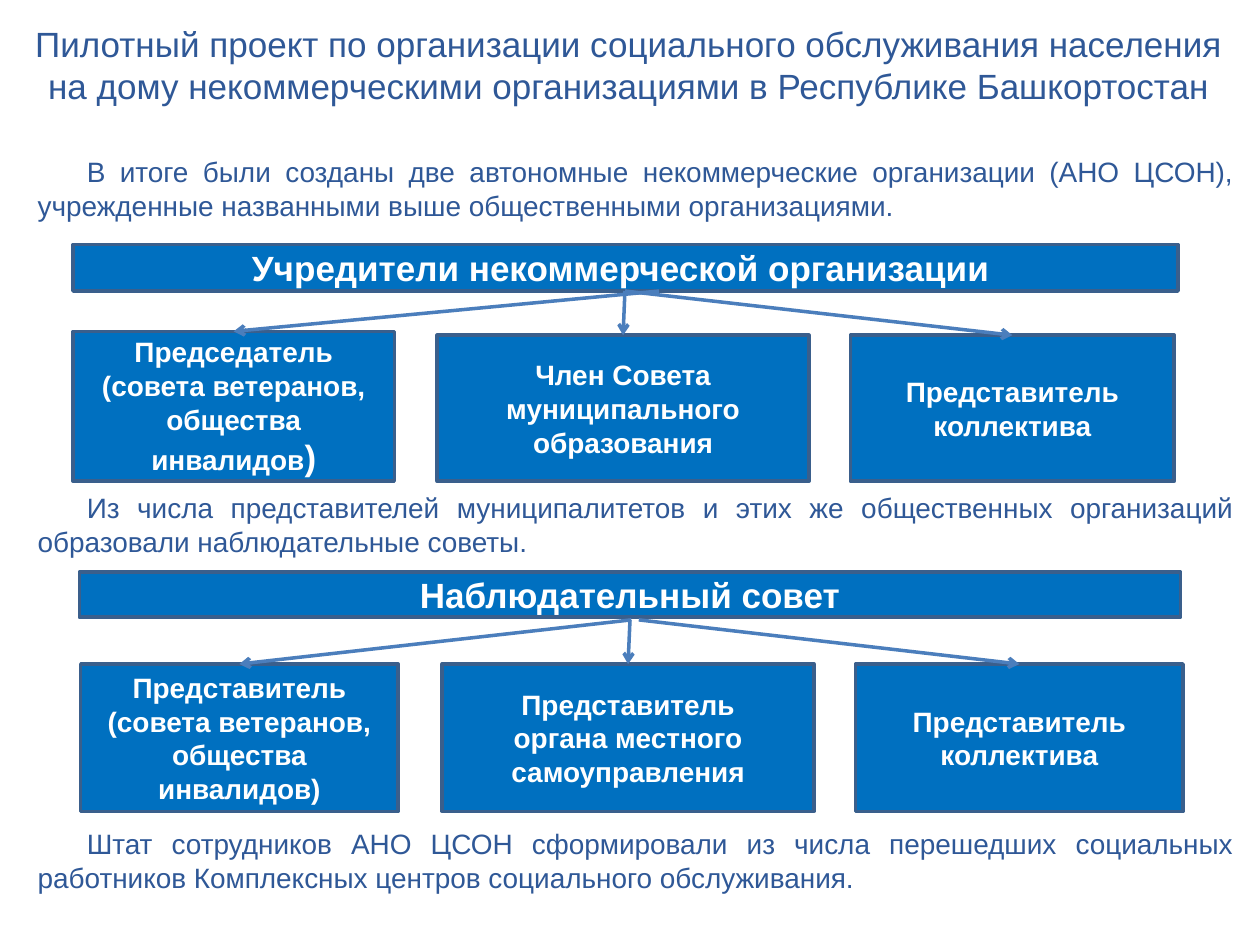
import pptx
import pptx.util
import pptx.dml.color
import pptx.enum.shapes
import pptx.enum.text
import pptx.oxml.ns
import lxml.etree

TEXT_BLUE = pptx.dml.color.RGBColor(0x2F, 0x58, 0x97)
FILL_BLUE = pptx.dml.color.RGBColor(0x00, 0x70, 0xC0)
EDGE_BLUE = pptx.dml.color.RGBColor(0x3A, 0x5F, 0x8C)
ARROW_BLUE = pptx.dml.color.RGBColor(0x4B, 0x7E, 0xBC)
WHITE = pptx.dml.color.RGBColor(0xFF, 0xFF, 0xFF)
ALIGN = pptx.enum.text.PP_ALIGN
FONT = "Arial"
LARGE, NORMAL = 20, 16

# Content; all places are percentages of the slide's width and height
TITLE = (
    "Пилотный проект по организации социального обслуживания населения \n"
    "на дому некоммерческими организациями в Республике Башкортостан "
)
STATEMENTS = [
    "В итоге были созданы две автономные некоммерческие организации (АНО ЦСОН), "
    "учрежденные названными выше общественными организациями. ",
    "Из числа представителей муниципалитетов и этих же общественных организаций "
    "образовали наблюдательные советы. ",
    "Штат сотрудников АНО ЦСОН сформировали из числа перешедших социальных "
    "работников Комплексных центров социального обслуживания. ",
]
STATEMENT_TOP, STATEMENT_STEP, STATEMENT_HEIGHT = 15.73, 35.56, 8.5

CHARTS = [
    {
        "header": ("Учредители некоммерческой организации ", 5.8, 25.87, 87.7, 4.93),
        "bottom": 50.93,
        "arrow_top": 30.8,
        # text, left, top, width, start of the arrow
        "members": [
            ("Председатель (совета ветеранов, общества инвалидов)", 5.8, 35.07, 25.5, 52.3),
            ("Член Совета муниципального образования", 34.7, 35.47, 29.5, 49.6),
            ("Представитель коллектива", 67.5, 35.47, 25.7, 49.6),
        ],
    },
    {
        "header": ("Наблюдательный совет", 6.3, 60.53, 87.4, 4.8),
        "bottom": 85.87,
        "arrow_top": 65.6,
        "members": [
            ("Предcтавитель (совета ветеранов, общества инвалидов)", 6.4, 70.27, 25.2, 50.1),
            ("Представитель\nоргана местного самоуправления", 35.1, 70.27, 29.5, 50),
            ("Представитель коллектива", 67.9, 70.27, 26, 50.7),
        ],
    },
]

deck = pptx.Presentation()
deck.slide_width = pptx.util.Inches(10)
deck.slide_height = pptx.util.Inches(7.5)
page = deck.slides.add_slide(deck.slide_layouts[6])


def across(share):
    return round(deck.slide_width * share / 100)


def down(share):
    return round(deck.slide_height * share / 100)


def area(left, top, width, height):
    return across(left), down(top), across(width), down(height)


def write(shape, text, size, color, align, bold=False):
    frame = shape.text_frame
    frame.word_wrap = True
    frame.text = text
    for para in frame.paragraphs:
        para.alignment = align
        for span in para.runs:
            span.font.name = FONT
            span.font.size = pptx.util.Pt(size)
            span.font.bold = bold
            span.font.color.rgb = color


def add_box(text, size, *place):
    box = page.shapes.add_shape(
        pptx.enum.shapes.MSO_SHAPE.RECTANGLE, *area(*place))
    box.shadow.inherit = False
    box.fill.solid()
    box.fill.fore_color.rgb = FILL_BLUE
    box.line.color.rgb = EDGE_BLUE
    box.line.width = pptx.util.Pt(2)
    box.text_frame.vertical_anchor = pptx.enum.text.MSO_ANCHOR.MIDDLE
    write(box, text, size, WHITE, ALIGN.CENTER, bold=True)
    return box


def add_arrow(start_x, start_y, end_x, end_y):
    arrow = page.shapes.add_connector(
        pptx.enum.shapes.MSO_CONNECTOR.STRAIGHT,
        across(start_x), down(start_y), across(end_x), down(end_y))
    arrow.line.color.rgb = ARROW_BLUE
    arrow.line.width = pptx.util.Pt(2)
    qn = pptx.oxml.ns.qn
    lxml.etree.SubElement(
        arrow.line._get_or_add_ln(), qn("a:tailEnd")).set("type", "arrow")
    lxml.etree.SubElement(arrow._element.spPr, qn("a:effectLst"))


# Title
title = page.shapes.add_textbox(*area(0.3, 1.73, 100, 10.27))
write(title, TITLE, LARGE, TEXT_BLUE, ALIGN.CENTER)

# Statements above, between and below the charts
for row, statement in enumerate(STATEMENTS):
    top = STATEMENT_TOP + row * STATEMENT_STEP
    box = page.shapes.add_textbox(*area(2, top, 96.9, STATEMENT_HEIGHT))
    write(box, statement, NORMAL, TEXT_BLUE, ALIGN.JUSTIFY)
    properties = box.text_frame.paragraphs[0]._p.get_or_add_pPr()
    properties.set("indent", str(pptx.util.Inches(0.39)))

# Organisation charts
member_boxes = []
for chart in CHARTS:
    heading, *place = chart["header"]
    add_box(heading, LARGE, *place)
    for text, left, top, width, arrow_start in chart["members"]:
        height = chart["bottom"] - top
        member_boxes.append(add_box(text, NORMAL, left, top, width, height))
        add_arrow(arrow_start, chart["arrow_top"], left + width / 2, top)

# The first member's closing bracket is larger
para = member_boxes[0].text_frame.paragraphs[0]
words = para.runs[0]
words.text = words.text[:-1]
bracket = para.add_run()
bracket.text = ")"
bracket.font.name = FONT
bracket.font.size = pptx.util.Pt(LARGE)
bracket.font.bold = True
bracket.font.color.rgb = WHITE

deck.save("out.pptx")
